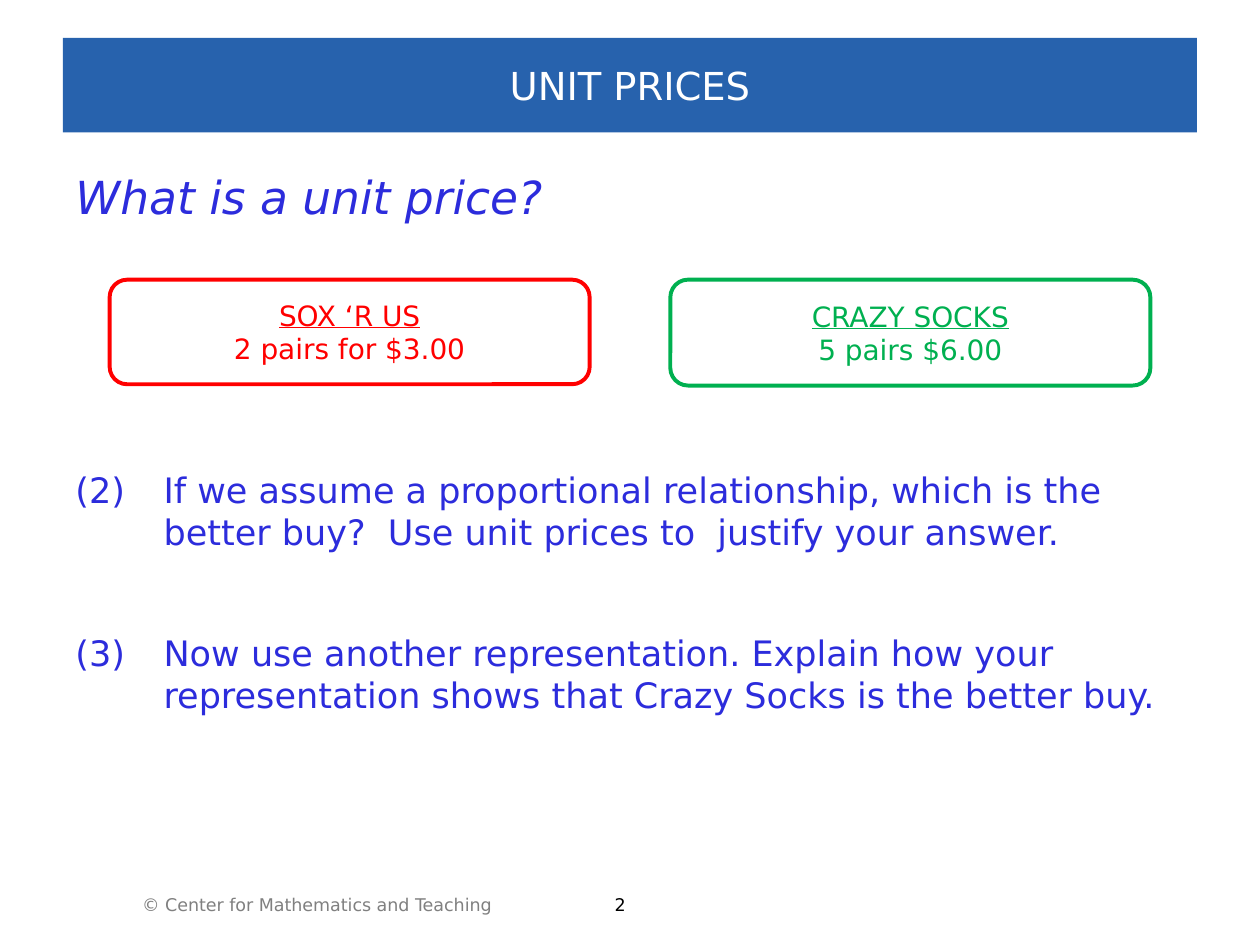
import dataclasses

import pptx
import pptx.dml.color
import pptx.enum.shapes
import pptx.enum.text
import pptx.util
from pptx.util import Inches

ALIGN = pptx.enum.text.PP_ALIGN
ANCHOR = pptx.enum.text.MSO_ANCHOR
SHAPE = pptx.enum.shapes.MSO_SHAPE


@dataclasses.dataclass(frozen=True)
class Theme:
    font: str = "DejaVu Sans"
    banner: str = "2762AD"
    white: str = "FFFFFF"
    body: str = "2C2CDC"
    red: str = "FF0000"
    green: str = "00B050"
    grey: str = "808080"
    black: str = "000000"
    heading_size: int = 26
    title_size: int = 22
    question_size: int = 20
    card_size: int = 16
    footer_size: int = 10
    card_line: float = 2.25


THEME = Theme()


def rgb(value):
    return pptx.dml.color.RGBColor.from_string(value)


def write_text(shape, text, *, size, color, align=ALIGN.LEFT, anchor=ANCHOR.TOP,
               italic=False, underline_first=False, hanging=None, wrap=True):
    """Write one paragraph per line of text into a shape."""
    frame = shape.text_frame
    frame.word_wrap = wrap
    frame.vertical_anchor = anchor
    for index, line in enumerate(text.split("\n")):
        paragraph = frame.paragraphs[0] if index == 0 else frame.add_paragraph()
        paragraph.alignment = align
        if hanging is not None:
            properties = paragraph._p.get_or_add_pPr()
            properties.set("marL", str(hanging))
            properties.set("indent", str(-hanging))
        run = paragraph.add_run()
        run.text = line
        run.font.name = THEME.font
        run.font.size = pptx.util.Pt(size)
        run.font.color.rgb = rgb(color)
        run.font.italic = italic
        run.font.underline = underline_first and index == 0


def add_text(shapes, box, text, **text_format):
    write_text(shapes.add_textbox(*box), text, **text_format)


def add_banner(slide, box, text):
    banner = slide.shapes.add_shape(SHAPE.RECTANGLE, *box)
    banner.shadow.inherit = False
    banner.fill.solid()
    banner.fill.fore_color.rgb = rgb(THEME.banner)
    banner.line.fill.background()
    write_text(banner, text, size=THEME.title_size, color=THEME.white,
               align=ALIGN.CENTER, anchor=ANCHOR.MIDDLE)


def add_store_card(slide, box, text, color):
    """Group a rounded outline with its centred offer."""
    left, top, width, height = box
    group = slide.shapes.add_group_shape()
    outline = group.shapes.add_shape(SHAPE.ROUNDED_RECTANGLE, *box)
    outline.shadow.inherit = False
    outline.fill.background()
    outline.line.color.rgb = rgb(color)
    outline.line.width = pptx.util.Pt(THEME.card_line)
    inset_x, inset_y = Inches(0.23), Inches(0.1)
    inner = (left + inset_x, top + inset_y, width - 2 * inset_x, height - 2 * inset_y)
    add_text(group.shapes, inner, text, size=THEME.card_size, color=color,
             align=ALIGN.CENTER, anchor=ANCHOR.MIDDLE, underline_first=True)


def add_questions(slide, box, questions, pitch):
    left, top, width, height = box
    for index, (number, question) in enumerate(questions):
        add_text(slide.shapes, (left, top + index * pitch, width, height),
                 f"({number})\t{question}", size=THEME.question_size,
                 color=THEME.body, hanging=Inches(0.7))


def add_footer(slide, box, credit, number):
    left, top, width, height = box
    add_text(slide.shapes, (left, top, Inches(3.02), height), credit,
             size=THEME.footer_size, color=THEME.grey, wrap=False)
    number_width = Inches(0.44)
    add_text(slide.shapes, (left + width - number_width, top, number_width, height),
             number, size=THEME.footer_size, color=THEME.black, wrap=False)


def main():
    presentation = pptx.Presentation()
    presentation.slide_width = Inches(10)
    presentation.slide_height = Inches(7.5)
    slide = presentation.slides.add_slide(presentation.slide_layouts[6])
    margin, content_width = Inches(0.5), Inches(9)

    # Footer
    add_footer(slide, (Inches(1.03), Inches(7.05), Inches(4.19), Inches(0.27)),
               "© Center for Mathematics and Teaching", "2")

    # Title and opening question
    add_banner(slide, (margin, Inches(0.3), content_width, Inches(0.75)), "UNIT PRICES")
    add_text(slide.shapes, (margin, Inches(1.29), Inches(4.56), Inches(0.54)),
             "What is a unit price?", size=THEME.heading_size, color=THEME.body,
             italic=True)

    # Store offers, mirrored about the slide's centre
    card_left, card_width = Inches(0.87), Inches(3.81)
    add_store_card(slide, (card_left, Inches(2.22), card_width, Inches(0.83)),
                   "SOX ‘R US\n2 pairs for $3.00", THEME.red)
    card_right = presentation.slide_width - card_left - card_width
    add_store_card(slide, (card_right, Inches(2.22), card_width, Inches(0.84)),
                   "CRAZY SOCKS\n5 pairs $6.00", THEME.green)

    # Numbered questions
    add_questions(slide, (margin, Inches(3.67), content_width, Inches(0.77)), [
        (2, "If we assume a proportional relationship, which is the better buy?  "
            "Use unit prices to  justify your answer."),
        (3, "Now use another representation. Explain how your representation "
            "shows that Crazy Socks is the better buy."),
    ], pitch=Inches(1.29))

    presentation.save("out.pptx")


if __name__ == "__main__":
    main()
